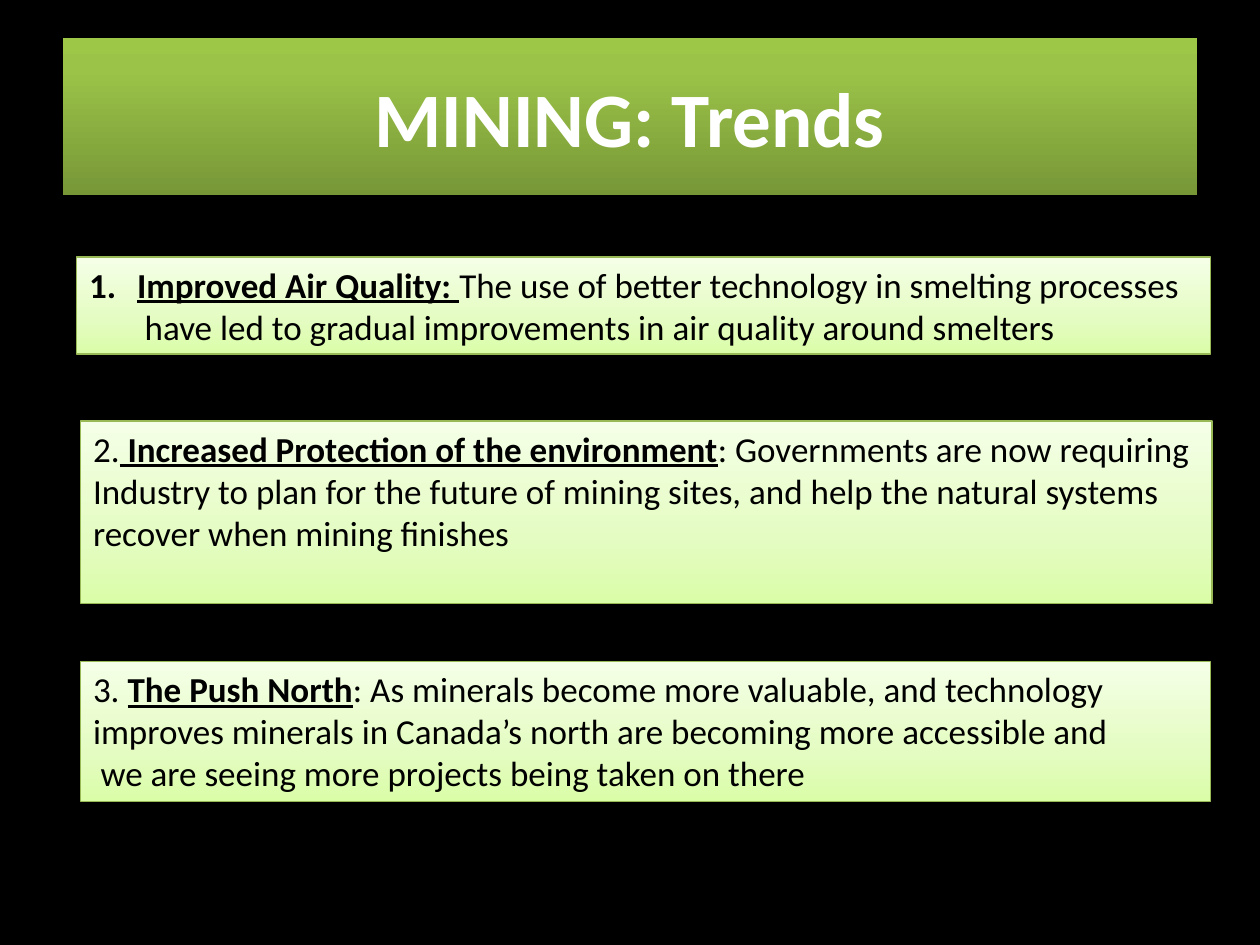
import pptx
import pptx.util
import pptx.dml.color
import pptx.enum.text
import pptx.enum.shapes
import pptx.oxml.ns
import lxml.etree

Inches, Pt = pptx.util.Inches, pptx.util.Pt
RGBColor = pptx.dml.color.RGBColor
qn = pptx.oxml.ns.qn

BLACK = RGBColor(0x00, 0x00, 0x00)
WHITE = RGBColor(0xFF, 0xFF, 0xFF)
EDGE = RGBColor(0x98, 0xB9, 0x55)
TITLE_STOPS = [(0, RGBColor(0x77, 0x97, 0x37)), (80, RGBColor(0x9B, 0xC3, 0x48)),
               (100, RGBColor(0x9D, 0xC7, 0x46))]
PANEL_STOPS = [(0, RGBColor(0xDA, 0xFD, 0xA7)), (35, RGBColor(0xE4, 0xFC, 0xC2)),
               (100, RGBColor(0xF5, 0xFF, 0xE7))]
FONT = "Calibri"

# Content: place, then lines of (left margin, numbered, spans of (text, emphasised))
TITLE = "MINING: Trends"
TRENDS = [
    ((0.61, 2.04, 9, 0.77), [
        (0.38, True, [("Improved Air Quality: ", True),
                      ("The use of better technology in smelting processes", False)]),
        (0.44, False, [("have led to gradual improvements in air quality around smelters", False)]),
    ]),
    ((0.64, 3.34, 8.98, 1.45), [
        (0, False, [("2.", False), (" Increased Protection of the environment", True),
                    (": Governments are now requiring", False)]),
        (0, False, [("Industry to plan for the future of mining sites, and help the natural systems", False)]),
        (0, False, [("recover when mining finishes", False)]),
    ]),
    ((0.64, 5.25, 8.97, 1.11), [
        (0, False, [("3. ", False), ("The Push North", True),
                    (": As minerals become more valuable, and technology", False)]),
        (0, False, [("improves minerals in Canada’s north are becoming more accessible and", False)]),
        (0.06, False, [("we are seeing more projects being taken on there", False)]),
    ]),
]


def fill_gradient(shape, stops):
    """Fill from bottom to top with any number of colour stops."""
    shape.fill.gradient()
    shape.fill.gradient_angle = 90
    stop_list = shape._element.spPr.find(qn("a:gradFill")).find(qn("a:gsLst"))
    for stop in list(stop_list):
        stop_list.remove(stop)
    for percent, colour in stops:
        stop = lxml.etree.SubElement(stop_list, qn("a:gs"), pos=str(percent * 1000))
        lxml.etree.SubElement(stop, qn("a:srgbClr"), val=str(colour))


def style_font(font, size, colour):
    font.name, font.size = FONT, Pt(size)
    font.color.rgb = colour


def add_line(para, margin, numbered, spans):
    para.alignment = pptx.enum.text.PP_ALIGN.LEFT
    style_font(para.font, 20, BLACK)
    properties = para._p.get_or_add_pPr()
    properties.set("marL", str(Inches(margin)))
    if numbered:
        properties.set("indent", str(-Inches(margin)))
        number = lxml.etree.Element(qn("a:buAutoNum"), type="arabicPeriod")
        properties.insert(0, number)
    for text, emphasised in spans:
        span = para.add_run()
        span.text = text
        if emphasised:
            span.font.bold = span.font.underline = True


def add_panel(page, place, lines):
    panel = page.shapes.add_shape(pptx.enum.shapes.MSO_SHAPE.RECTANGLE,
                                  *[Inches(value) for value in place])
    panel.shadow.inherit = False
    fill_gradient(panel, PANEL_STOPS)
    panel.line.color.rgb = EDGE
    panel.line.width = Pt(0.75)
    frame = panel.text_frame
    frame.word_wrap = True
    frame.vertical_anchor = pptx.enum.text.MSO_ANCHOR.TOP
    for index, line in enumerate(lines):
        add_line(frame.add_paragraph() if index else frame.paragraphs[0], *line)


def main():
    deck = pptx.Presentation()
    deck.slide_width, deck.slide_height = Inches(10), Inches(7.5)
    page = deck.slides.add_slide(deck.slide_layouts[5])
    page.background.fill.solid()
    page.background.fill.fore_color.rgb = BLACK

    # Title banner
    title = page.shapes.title
    title.left, title.top, title.width, title.height = map(Inches, (0.5, 0.3, 9, 1.25))
    fill_gradient(title, TITLE_STOPS)
    title.text_frame.text = TITLE
    title.text_frame.vertical_anchor = pptx.enum.text.MSO_ANCHOR.MIDDLE
    para = title.text_frame.paragraphs[0]
    para.alignment = pptx.enum.text.PP_ALIGN.CENTER
    style_font(para.font, 44, WHITE)
    para.font.bold = True

    # Trend panels
    for place, lines in TRENDS:
        add_panel(page, place, lines)

    deck.save("out.pptx")


if __name__ == "__main__":
    main()
